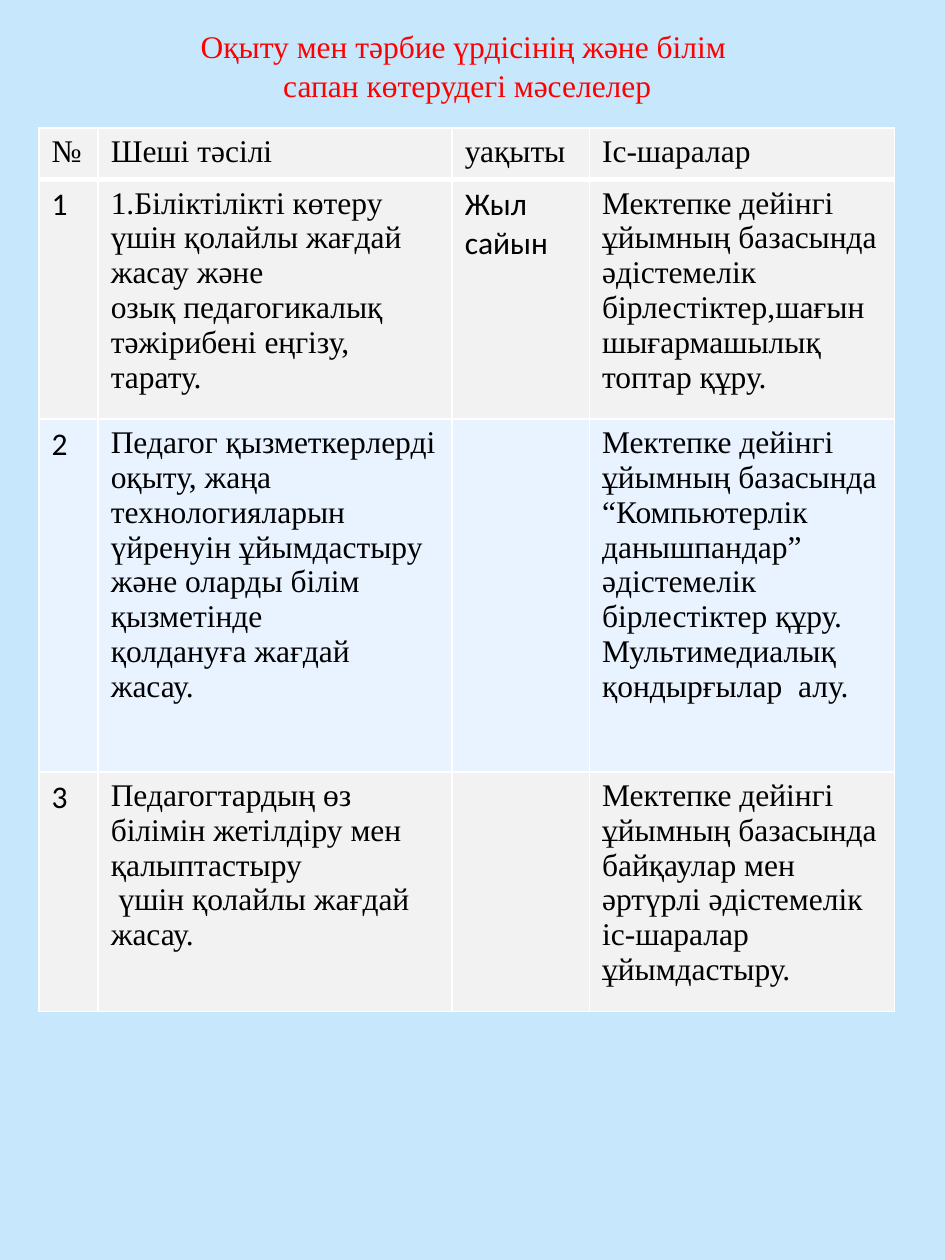
from lxml.etree import SubElement
from pptx import Presentation
from pptx.dml.color import RGBColor
from pptx.enum.text import MSO_ANCHOR, MSO_AUTO_SIZE, PP_ALIGN
from pptx.oxml.ns import qn
from pptx.util import Pt

COLORS = {
    "background": "C6E7FC",
    "title": "FF0000",
    "text": "000000",
    "gray": "F2F2F2",
    "blue": "E8F3FF",
    "border": "FFFFFF",
}
SERIF, SANS = "Times New Roman", "Calibri"
TITLE = "Оқыту мен тәрбие үрдісінің және білім \nсапан көтерудегі мәселелер"
COL_WIDTHS = [33.8, 202.3, 78.5, 174.2]
ROW_HEIGHTS = [29.5, 136.8, 201.6, 136.8]
ROWS = [
    ["№", "Шеші тәсілі", "уақыты", "Іс-шаралар"],
    [
        "1",
        "1.Біліктілікті көтеру үшін қолайлы жағдай жасау және\n"
        "озық педагогикалық тәжірибені еңгізу, тарату.",
        "Жыл сайын",
        "Мектепке дейінгі ұйымның базасында әдістемелік "
        "бірлестіктер,шағын шығармашылық топтар құру.",
    ],
    [
        "2",
        "Педагог қызметкерлерді оқыту, жаңа технологияларын\n"
        "үйренуін ұйымдастыру және оларды білім қызметінде\n"
        "қолдануға жағдай жасау.",
        "",
        "Мектепке дейінгі ұйымның базасында “Компьютерлік данышпандар” "
        "әдістемелік бірлестіктер құру.\n"
        "Мультимедиалық қондырғылар  алу.",
    ],
    [
        "3",
        "Педагогтардың өз білімін жетілдіру мен қалыптастыру\n"
        " үшін қолайлы жағдай жасау.",
        "",
        "Мектепке дейінгі ұйымның базасында байқаулар мен әртүрлі "
        "әдістемелік іс-шаралар ұйымдастыру.",
    ],
]


def rgb(name):
    return RGBColor.from_string(COLORS[name])


def format_runs(tf, font, color):
    for p in tf.paragraphs:
        for r in p.runs:
            r.font.size = Pt(18)
            r.font.name = font
            r.font.bold = False
            r.font.color.rgb = rgb(color)


def add_title(slide):
    sp = slide.shapes.title
    sp.left, sp.top, sp.width, sp.height = Pt(33.8), Pt(11.5), Pt(466.6), Pt(51.1)
    tf = sp.text_frame
    tf.text = TITLE
    tf.word_wrap = True
    tf.auto_size = MSO_AUTO_SIZE.NONE
    tf.vertical_anchor = MSO_ANCHOR.TOP
    for p in tf.paragraphs:
        p.alignment = PP_ALIGN.CENTER
        p.line_spacing = Pt(22)
        p.space_before = Pt(0)
    format_runs(tf, SERIF, "title")


def set_borders(cell, top, bottom):
    """Draw the four cell borders; top and bottom are widths in points."""
    tc_pr = cell._tc.get_or_add_tcPr()
    for side, width in (("L", 1), ("R", 1), ("T", top), ("B", bottom)):
        ln = SubElement(tc_pr, qn(f"a:ln{side}"), w=str(Pt(width)))
        fill = SubElement(ln, qn("a:solidFill"))
        SubElement(fill, qn("a:srgbClr"), val=COLORS["border"])


def add_measures_table(slide):
    frame = slide.shapes.add_table(
        len(ROWS), len(COL_WIDTHS), Pt(22.3), Pt(73.2),
        Pt(sum(COL_WIDTHS)), Pt(sum(ROW_HEIGHTS)))
    table = frame.table
    for column, width in zip(table.columns, COL_WIDTHS):
        column.width = Pt(width)
    for i, (row, height) in enumerate(zip(table.rows, ROW_HEIGHTS)):
        row.height = Pt(height)
        for j, cell in enumerate(row.cells):
            set_borders(cell, 3 if i == 1 else 1, 3 if i == 0 else 1)
            cell.fill.solid()
            cell.fill.fore_color.rgb = rgb("blue" if i == 2 else "gray")
            cell.text_frame.text = ROWS[i][j]
            font = SANS if i > 0 and j in (0, 2) else SERIF
            format_runs(cell.text_frame, font, "text")


def main():
    prs = Presentation()
    prs.slide_width, prs.slide_height = Pt(540), Pt(720)
    slide = prs.slides.add_slide(prs.slide_layouts.get_by_name("Title Only"))
    slide.background.fill.solid()
    slide.background.fill.fore_color.rgb = rgb("background")
    add_title(slide)
    add_measures_table(slide)
    prs.save("out.pptx")


if __name__ == "__main__":
    main()
